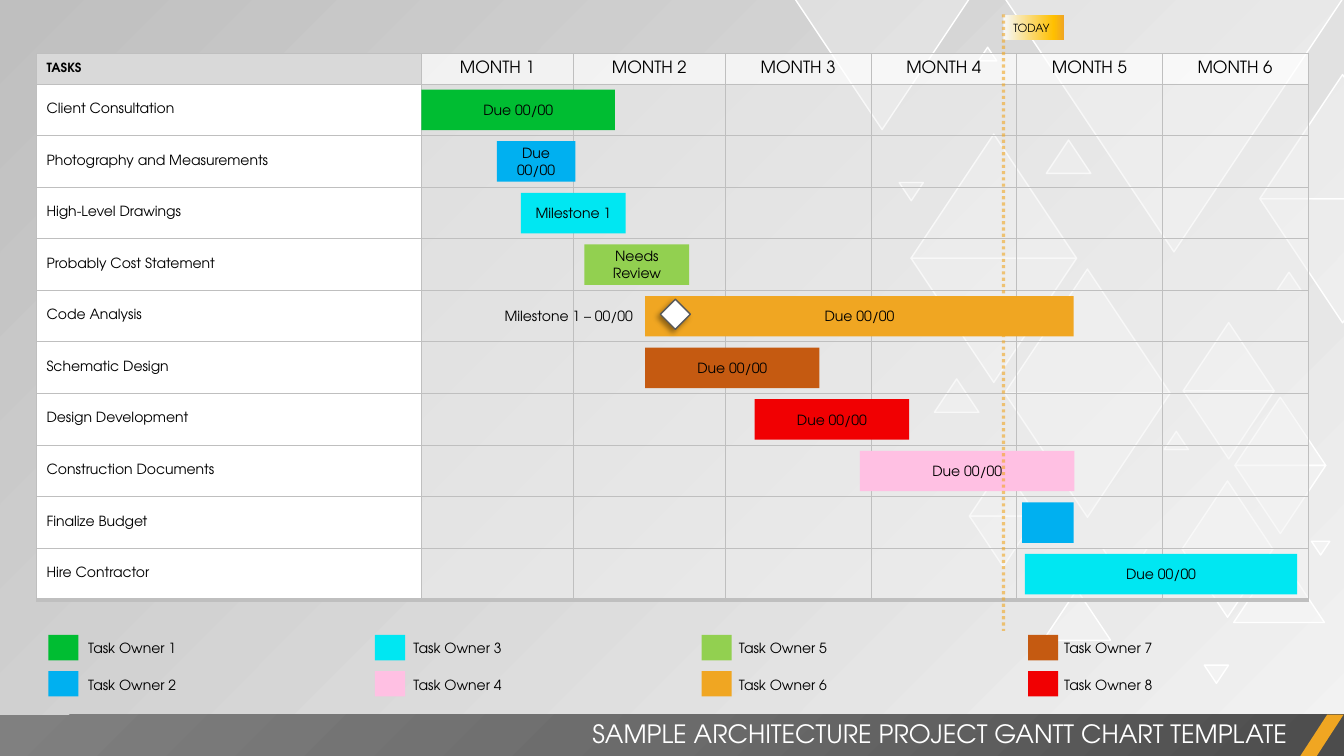
from dataclasses import dataclass

from pptx import Presentation, util as u
from pptx.dml.color import RGBColor
from pptx.enum import dml, shapes, text
from pptx.oxml import parse_xml
from pptx.oxml.ns import nsdecls, qn

Cm, Pt = u.Cm, u.Pt
KIND, ALIGN, ANCHOR = shapes.MSO_SHAPE, text.PP_ALIGN, text.MSO_ANCHOR


@dataclass(frozen=True)
class Theme:
    font: str = "TeX Gyre Adventor"
    ink: str = "000000"
    white: str = "FFFFFF"
    pale: str = "F2F2F2"
    head: str = "D9D9D9"
    rule: str = "BFBFBF"
    edge: str = "595959"
    gold: str = "F0A622"
    back: tuple = ((0, "F2F2F2", 40), (100, "BFBFBF", 100))
    foot: tuple = ((0, "4C4C4C", 100), (50, "6B6B6B", 100), (100, "808080", 100))
    flag: tuple = ((0, "F6F8FC", 100), (83, "FFC000", 100), (100, "F0A622", 100))
    owners: tuple = ("00BD32", "00B0F0", "00E7F2", "FFC0E3",
                     "92D050", "F0A622", "C55A11", "F10002")
    title: int = 18
    month: int = 12
    body: int = 10
    label: int = 9
    small: int = 8


T = Theme()

# Triangles: left, top, width, form (up, down, or both stacked as a pair)
TRIS = [
    (22.96, 3.38, 4.17, "pair"), (25.32, 6.78, 4.17, "pair"),
    (25.32, -0.05, 8.53, "down"), (31.09, 13.97, 2.29, "up"),
    (29.79, 12.12, 2.29, "pair"), (29.82, 8.13, 2.29, "pair"),
    (31.12, 10.01, 2.29, "pair"), (26.29, 14.86, 1.7, "up"),
    (24.43, 11.73, 1.7, "pair"), (31.75, 1.88, 4.17, "pair"),
    (27.79, 13.82, 1.12, "down"), (23.55, 9.55, 1.12, "up"),
    (29.34, 10.87, 0.61, "up"), (30.35, 16.76, 0.61, "down"),
    (22.66, 4.6, 0.61, "down"), (32.18, 6.86, 0.61, "up"),
    (24.66, 1.19, 0.46, "up"), (33.05, 13.64, 0.46, "down"),
    (26.37, 3.53, 1.12, "up"), (20.02, -0.05, 4.42, "down"),
]

# Tasks: name, bar left, bar width, owner number, bar text
TASKS = [
    ("Client Consultation", 10.62, 4.88, 1, "Due 00/00"),
    ("Photography and Measurements", 12.52, 1.98, 2, "Due 00/00"),
    ("High-Level Drawings", 13.13, 2.64, 3, "Milestone 1"),
    ("Probably Cost Statement", 14.73, 2.64, 5, "Needs Review"),
    ("Code Analysis", 16.26, 10.8, 6, "Due 00/00"),
    ("Schematic Design", 16.26, 4.39, 7, "Due 00/00"),
    ("Design Development", 19.02, 3.89, 8, "Due 00/00"),
    ("Construction Documents", 21.67, 5.41, 4, "Due 00/00"),
    ("Finalize Budget", 25.76, 1.3, 2, ""),
    ("Hire Contractor", 25.83, 6.86, 3, "Due 00/00"),
]
COLS = [9.7, 3.83, 3.83, 3.67, 3.67, 3.67, 3.67]
HEAD, ROW, BAR = 0.75, 1.3, 1.02


def rgb(hue):
    return RGBColor.from_string(hue)


def fade(node, part):
    """Make the solid fill of a node part opaque, in percent."""
    hue = node.find(qn("a:solidFill"))[0]
    hue.append(parse_xml(f'<a:alpha {nsdecls("a")} val="{part * 1000}"/>'))


def blend(fill, host, stops, way):
    """Give a fill its gradient stops and its direction."""
    fill.gradient()
    node = next(host.iter(qn("a:gradFill")))
    node.clear()
    rows = "".join(
        f'<a:gs pos="{pos * 1000}"><a:srgbClr val="{hue}">'
        f'<a:alpha val="{part * 1000}"/></a:srgbClr></a:gs>'
        for pos, hue, part in stops)
    node.append(parse_xml(f'<a:gsLst {nsdecls("a")}>{rows}</a:gsLst>'))
    node.append(parse_xml(way))


def turn(deg):
    return f'<a:lin {nsdecls("a")} ang="{deg * 60000}" scaled="0"/>'


def write(frame, words, size, hue=T.ink, align=ALIGN.LEFT, bold=False):
    para = frame.paragraphs[0]
    para.alignment = align
    run = para.add_run()
    run.text = words
    font = run.font
    font.name, font.size, font.bold = T.font, Pt(size), bold
    font.color.rgb = rgb(hue)


def shape(tree, kind, box, hue=None, edge=None):
    item = tree.add_shape(kind, *map(Cm, box))
    item.shadow.inherit = False
    if hue:
        item.fill.solid()
        item.fill.fore_color.rgb = rgb(hue)
    if edge:
        item.line.color.rgb = rgb(edge)
        item.line.width = Pt(1)
    else:
        item.line.fill.background()
    return item


def label(tree, box, words, size, hue=T.ink, align=ALIGN.LEFT, anchor=ANCHOR.TOP):
    frame = tree.add_textbox(*map(Cm, box)).text_frame
    frame.word_wrap = True
    frame.vertical_anchor = anchor
    write(frame, words, size, hue, align)


def cell_look(cell, hue, part, base):
    """Set the borders of a cell, then its fill."""
    props = cell._tc.get_or_add_tcPr()
    for side, wide in zip("LRTB", (0.5, 0.5, 0.5, base)):
        props.append(parse_xml(
            f'<a:ln{side} {nsdecls("a")} w="{Pt(wide)}"><a:solidFill>'
            f'<a:srgbClr val="{T.rule}"/></a:solidFill></a:ln{side}>'))
    cell.fill.solid()
    cell.fill.fore_color.rgb = rgb(hue)
    fade(props, part)
    cell.vertical_anchor = ANCHOR.MIDDLE


def backdrop(slide):
    blend(slide.background.fill, slide.element, T.back, turn(225))
    tree = slide.shapes.add_group_shape().shapes
    for left, top, wide, form in TRIS:
        high = wide * 0.75
        for step, way in enumerate(("up", "down") if form == "pair" else (form,)):
            box = (left, top + step * high, wide, high)
            tri = shape(tree, KIND.ISOSCELES_TRIANGLE, box, T.white, T.white)
            fade(tri.element.spPr, 30)
            tri.rotation = 180 if way == "down" else 0


def footer(tree):
    band = shape(tree, KIND.RECTANGLE, (0, 18.01, 33.87, 1.04))
    blend(band.fill, band.element, T.foot,
          f'<a:path {nsdecls("a")} path="circle"><a:fillToRect l="100000" t="100000"/></a:path>')
    slant = shape(tree, KIND.PARALLELOGRAM, (32.77, 18.01, 1.09, 1.04), T.gold)
    slant.adjustments[0] = 0.65
    label(tree, (13.34, 17.98, 19.35, 1.02),
          "SAMPLE ARCHITECTURE PROJECT GANTT CHART TEMPLATE",
          T.title, T.white, ALIGN.RIGHT)


def grid(tree):
    count = len(TASKS)
    table = tree.add_table(count + 1, len(COLS), Cm(0.92), Cm(1.35),
                           Cm(sum(COLS)), Cm(HEAD + count * ROW)).table
    table.first_row = table.horz_banding = False
    for col, wide in zip(table.columns, COLS):
        col.width = Cm(wide)
    for i, row in enumerate(table.rows):
        row.height = Cm(ROW if i else HEAD)
        for j, cell in enumerate(row.cells):
            if j:
                hue, part = (T.pale, 50) if i else (T.white, 75)
            else:
                hue, part = (T.white if i else T.head), 100
            cell_look(cell, hue, part, 3 if i == count else 0.5)
            if i and not j:
                write(cell.text_frame, TASKS[i - 1][0], T.body)
            elif j and not i:
                write(cell.text_frame, f"MONTH {j}", T.month, align=ALIGN.CENTER)
            elif not i:
                write(cell.text_frame, "TASKS", T.label, bold=True)


def bars(tree):
    for i, (_, left, wide, owner, words) in enumerate(TASKS):
        box = (left, 2.26 + i * ROW, wide, BAR)
        bar = shape(tree, KIND.RECTANGLE, box, T.owners[owner - 1])
        if words:
            bar.text_frame.word_wrap = True
            write(bar.text_frame, words, T.body, align=ALIGN.CENTER)


def legend(tree):
    for i, hue in enumerate(T.owners):
        col, row = divmod(i, 2)
        top = 16 + row * 0.91
        shape(tree, KIND.RECTANGLE, (1.22 + col * 8.23, top, 0.76, 0.64), hue)
        label(tree, (1.97 + col * 8.2, top, 6.1, 0.68), f"Task Owner {i + 1}", T.body)


def today(slide):
    tree = slide.shapes.add_group_shape().shapes
    flag = shape(tree, KIND.RECTANGLE, (25.29, 0.38, 1.52, 0.64))
    blend(flag.fill, flag.element, T.flag, turn(0))
    flag.text_frame.word_wrap = True
    write(flag.text_frame, "TODAY", T.small)
    ends = map(Cm, (25.29, 0.36, 25.29, 15.9))
    mark = tree.add_connector(shapes.MSO_CONNECTOR.STRAIGHT, *ends)
    mark.line.color.rgb = rgb(T.gold)
    mark.line.width = Pt(2.25)
    mark.line.dash_style = dml.MSO_LINE.ROUND_DOT
    props = mark.element.spPr
    fade(props.find(qn("a:ln")), 60)
    props.append(parse_xml(f'<a:effectLst {nsdecls("a")}/>'))


def milestone(tree):
    gem = shape(tree, KIND.DIAMOND, (16.64, 7.54, 0.76, 0.76), T.white, T.edge)
    gem.element.spPr.find(qn("a:effectLst")).append(parse_xml(
        f'<a:outerShdw {nsdecls("a")} blurRad="{Pt(4)}" dist="{Pt(3)}" dir="8100000">'
        f'<a:srgbClr val="{T.ink}"><a:alpha val="40000"/></a:srgbClr></a:outerShdw>'))
    label(tree, (10.69, 7.44, 5.51, BAR), "Milestone 1 – 00/00", T.body,
          align=ALIGN.RIGHT, anchor=ANCHOR.MIDDLE)


def main():
    deck = Presentation()
    deck.slide_width, deck.slide_height = Cm(33.87), Cm(19.05)
    slide = deck.slides.add_slide(deck.slide_layouts[6])
    tree = slide.shapes
    backdrop(slide)
    footer(tree)
    # Chart: grid, bars and key
    grid(tree)
    bars(tree)
    legend(tree)
    # Markers
    today(slide)
    milestone(tree)
    deck.save("out.pptx")


if __name__ == "__main__":
    main()
